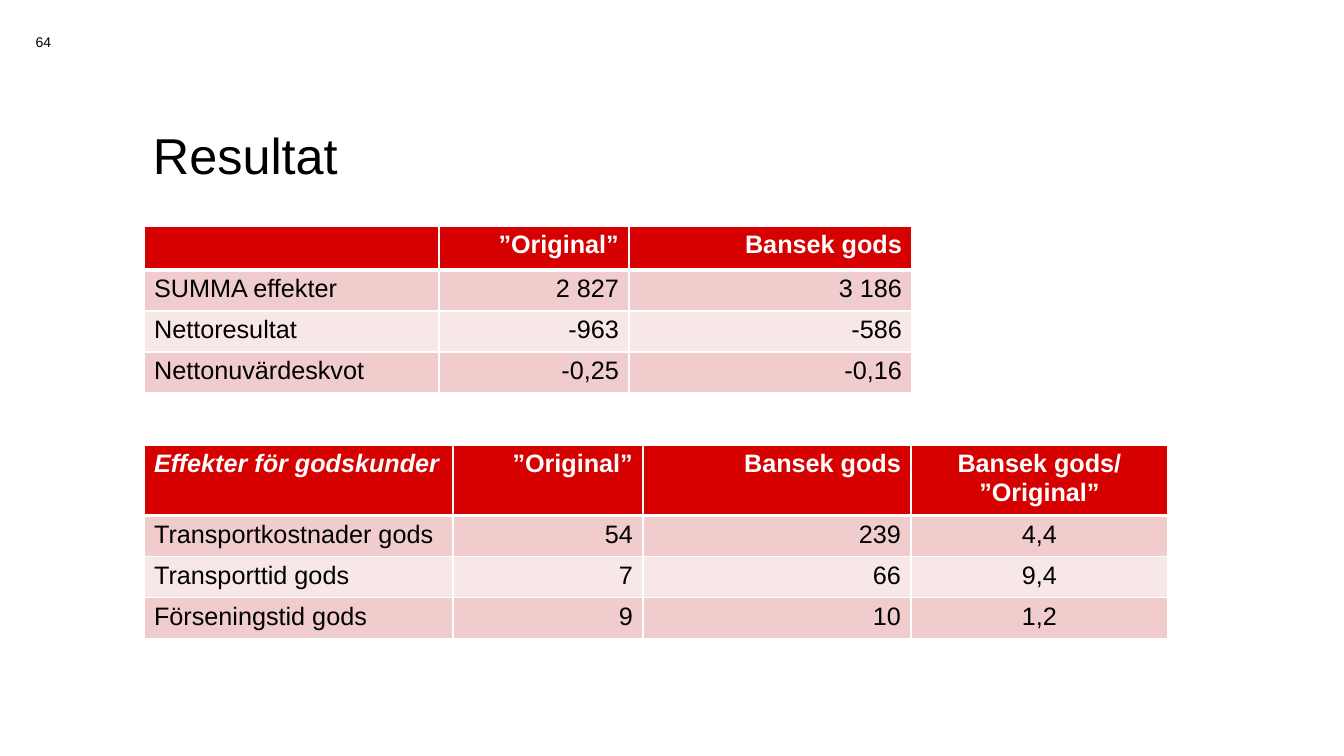
"""Build the "Resultat" slide with two result tables."""
from lxml import etree
from pptx import Presentation
from pptx import util as u
from pptx.dml.color import RGBColor
from pptx.enum import text
from pptx.oxml.ns import qn

LEFT, CENTER, RIGHT = text.PP_ALIGN.LEFT, text.PP_ALIGN.CENTER, text.PP_ALIGN.RIGHT
BLACK = RGBColor(0x00, 0x00, 0x00)
WHITE = RGBColor(0xFF, 0xFF, 0xFF)
RED = RGBColor(0xD7, 0x00, 0x00)
BANDS = [RGBColor(0xF0, 0xCC, 0xCC), RGBColor(0xF8, 0xE7, 0xE7)]
PX_PER_INCH = 100.8
ROW_HEIGHT = 41
TABLE_LEFT = 144

TABLES = [
    {
        "top": 226,
        "header_height": 44,
        "widths": [295, 190, 283],
        "italic_corner": False,
        "rows": [
            ["", "”Original”", "Bansek gods"],
            ["SUMMA effekter", "2 827", "3 186"],
            ["Nettoresultat", "-963", "-586"],
            ["Nettonuvärdeskvot", "-0,25", "-0,16"],
        ],
    },
    {
        "top": 445,
        "header_height": 66,
        "widths": [309, 190, 268, 257],
        "italic_corner": True,
        "rows": [
            ["Effekter för godskunder", "”Original”", "Bansek gods", "Bansek gods/ ”Original”"],
            ["Transportkostnader gods", "54", "239", "4,4"],
            ["Transporttid gods", "7", "66", "9,4"],
            ["Förseningstid gods", "9", "10", "1,2"],
        ],
    },
]
ALIGNMENTS = [LEFT, RIGHT, RIGHT, CENTER]


def px(length):
    return u.Emu(round(length * 914400 / PX_PER_INCH))


def write(frame, content, size=18, color=BLACK, align=LEFT, bold=False, italic=False):
    frame.word_wrap = True
    paragraph = frame.paragraphs[0]
    paragraph.alignment = align
    paragraph.font.size = u.Pt(size)
    if content:
        run = paragraph.add_run()
        run.text = content
        font = run.font
        font.name, font.size = "Arial", u.Pt(size)
        font.bold, font.italic = bold, italic
        font.color.rgb = color


def add_text(slide, content, left, top, width, height, anchor, **style):
    box = slide.shapes.add_textbox(px(left), px(top), px(width), px(height))
    box.text_frame.vertical_anchor = anchor
    write(box.text_frame, content, **style)


def set_borders(cell, bottom_width):
    properties = cell._tc.get_or_add_tcPr()
    widths = {"a:lnL": 1, "a:lnR": 1, "a:lnT": 1, "a:lnB": bottom_width}
    for position, (tag, width) in enumerate(widths.items()):
        line = etree.Element(qn(tag), w=str(u.Pt(width)))
        fill = etree.SubElement(line, qn("a:solidFill"))
        etree.SubElement(fill, qn("a:srgbClr"), val=str(WHITE))
        properties.insert(position, line)


def add_result_table(slide, data):
    rows, widths = data["rows"], data["widths"]
    heights = [data["header_height"]] + [ROW_HEIGHT] * (len(rows) - 1)
    table = slide.shapes.add_table(
        len(rows), len(widths), px(TABLE_LEFT), px(data["top"]), px(sum(widths)), px(sum(heights))
    ).table
    for column, width in zip(table.columns, widths):
        column.width = px(width)
    for r, (values, height) in enumerate(zip(rows, heights)):
        table.rows[r].height = px(height)
        header = r == 0
        for c, value in enumerate(values):
            cell = table.cell(r, c)
            cell.fill.solid()
            cell.fill.fore_color.rgb = RED if header else BANDS[(r - 1) % 2]
            set_borders(cell, 3 if header else 1)
            write(
                cell.text_frame, value, color=WHITE if header else BLACK, align=ALIGNMENTS[c],
                bold=header, italic=header and c == 0 and data["italic_corner"],
            )


def main():
    presentation = Presentation()
    presentation.slide_width, presentation.slide_height = px(1344), px(756)
    slide = presentation.slides.add_slide(presentation.slide_layouts[6])
    add_text(slide, "64", 0, 22, 87, 40, text.MSO_ANCHOR.MIDDLE, size=10, align=CENTER)
    for data in TABLES:
        add_result_table(slide, data)
    add_text(slide, "Resultat", 143, 119, 660, 72, text.MSO_ANCHOR.TOP, size=36)
    presentation.save("out.pptx")


if __name__ == "__main__":
    main()
